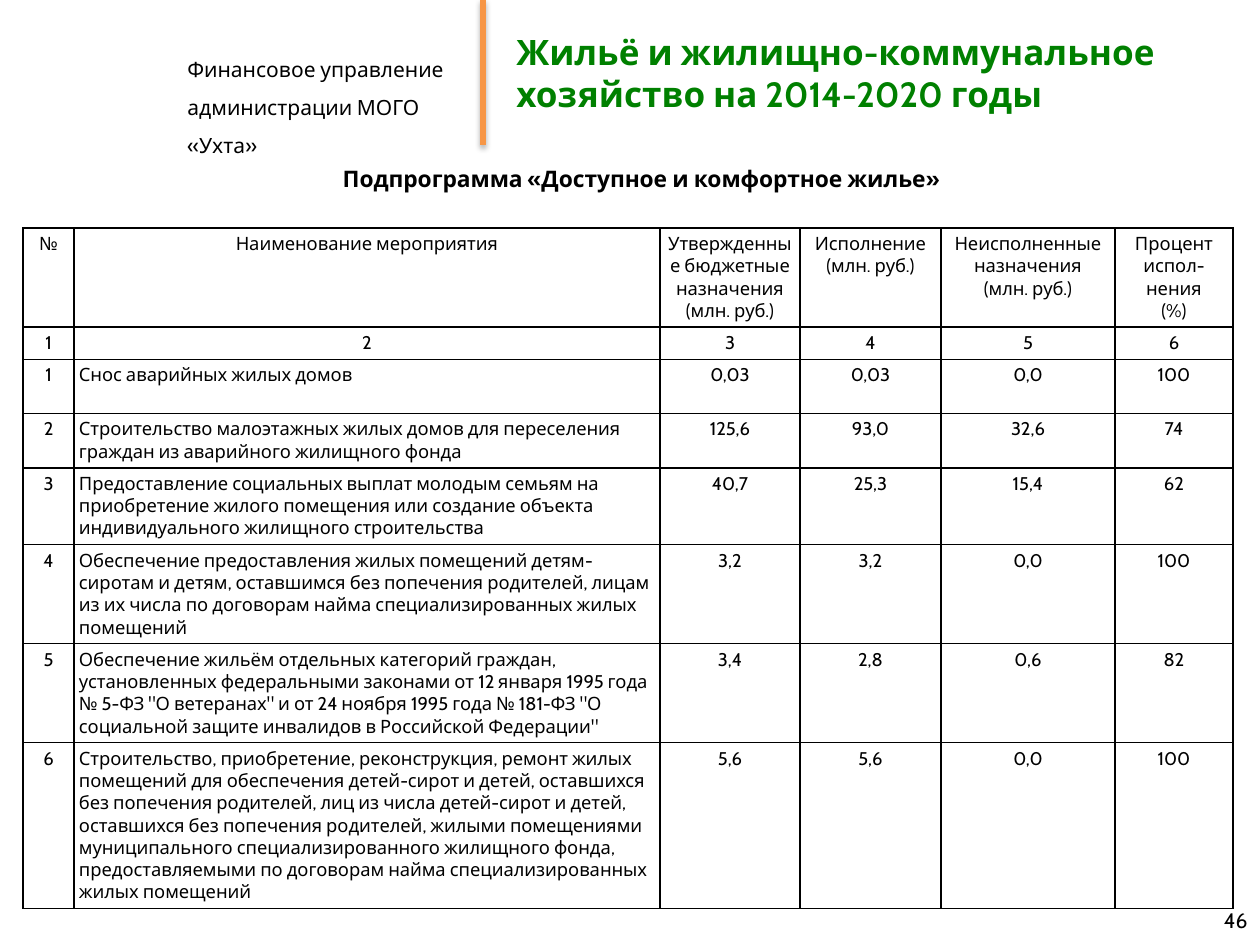
from dataclasses import dataclass

import pptx
import pptx.dml.color
import pptx.enum.shapes
import pptx.enum.text
import pptx.oxml
import pptx.oxml.ns
import pptx.util

PX = 914400 / 126
FONT = "Cabin"
BLACK, GREEN, ORANGE = "000000", "008000", "F79646"
ALIGN = pptx.enum.text.PP_ALIGN
ANCHOR = pptx.enum.text.MSO_ANCHOR

COLUMN_WIDTHS = [51, 586, 140, 141, 174, 118]
ROW_HEIGHTS = [99, 32, 54, 54, 76, 98, 98, 164]
NAME_COLUMN = 1
HEADINGS = [
    "№",
    "Наименование мероприятия",
    "Утвержденные бюджетные назначения\n(млн. руб.)",
    "Исполнение\n(млн. руб.)",
    "Неисполненные назначения\n(млн. руб.)",
    "Процент испол-нения\n(%)",
]


@dataclass
class Measure:
    name: str
    approved: str
    executed: str
    unused: str
    percent: str


MEASURES = [
    Measure("Снос аварийных жилых домов", "0,03", "0,03", "0,0", "100"),
    Measure("Строительство малоэтажных жилых домов для переселения граждан из "
            "аварийного жилищного фонда", "125,6", "93,0", "32,6", "74"),
    Measure("Предоставление социальных выплат молодым семьям на приобретение жилого "
            "помещения или создание объекта индивидуального жилищного строительства",
            "40,7", "25,3", "15,4", "62"),
    Measure("Обеспечение предоставления жилых помещений детям-сиротам и детям, "
            "оставшимся без попечения родителей, лицам из их числа по договорам найма "
            "специализированных жилых помещений", "3,2", "3,2", "0,0", "100"),
    Measure("Обеспечение жильём отдельных категорий граждан, установленных федеральными "
            "законами от 12 января 1995 года № 5-ФЗ \"О ветеранах\" и от 24 ноября 1995 "
            "года № 181-ФЗ \"О социальной защите инвалидов в Российской Федерации\"",
            "3,4", "2,8", "0,6", "82"),
    Measure("Строительство, приобретение, реконструкция, ремонт жилых помещений для "
            "обеспечения детей-сирот и детей, оставшихся без попечения родителей, лиц из "
            "числа детей-сирот и детей, оставшихся без попечения родителей, жилыми "
            "помещениями муниципального специализированного жилищного фонда, "
            "предоставляемыми по договорам найма специализированных жилых помещений",
            "5,6", "5,6", "0,0", "100"),
]


@dataclass
class Label:
    text: str
    left: int
    top: int
    width: int
    height: int
    size: float
    color: str = BLACK
    bold: bool = False
    align: ALIGN = ALIGN.LEFT
    anchor: ANCHOR = ANCHOR.TOP
    spacing: float = 1.0


LABELS = [
    Label("Финансовое управление\nадминистрации МОГО «Ухта»", 175, 38, 315, 83, 12,
          spacing=1.5),
    Label("Подпрограмма «Доступное и комфортное жилье»", 25, 159, 1232, 40, 13,
          bold=True, align=ALIGN.CENTER),
    Label("Жильё и жилищно-коммунальное хозяйство на 2014-2020 годы", 504, 9, 722, 127,
          20, GREEN, bold=True, anchor=ANCHOR.MIDDLE),
    Label("46", 966, 895, 294, 50, 12, align=ALIGN.RIGHT, anchor=ANCHOR.MIDDLE),
]


def emu(px: int) -> pptx.util.Emu:
    return pptx.util.Emu(round(px * PX))


def rgb(color: str) -> pptx.dml.color.RGBColor:
    return pptx.dml.color.RGBColor.from_string(color)


def style_paragraph(para, size: float, color: str, bold: bool, align: ALIGN) -> None:
    para.alignment = align
    for span in para.runs:
        span.font.name = FONT
        span.font.size = pptx.util.Pt(size)
        span.font.bold = bold
        span.font.color.rgb = rgb(color)


def add_label(page, label: Label) -> None:
    box = page.shapes.add_textbox(emu(label.left), emu(label.top),
                                  emu(label.width), emu(label.height))
    frame = box.text_frame
    frame.word_wrap = True
    frame.vertical_anchor = label.anchor
    frame.text = label.text
    for para in frame.paragraphs:
        para.line_spacing = label.spacing
        style_paragraph(para, label.size, label.color, label.bold, label.align)


def add_divider(page) -> None:
    """Draw the orange vertical rule with its soft shadow."""
    line = page.shapes.add_connector(pptx.enum.shapes.MSO_CONNECTOR.STRAIGHT,
                                     emu(483), 0, emu(483), emu(145))
    line.line.color.rgb = rgb(ORANGE)
    line.line.width = pptx.util.Pt(3)
    line._element.spPr.append(pptx.oxml.parse_xml(
        f'<a:effectLst {pptx.oxml.ns.nsdecls("a")}>'
        '<a:outerShdw blurRad="40000" dist="23000" dir="5400000" rotWithShape="0">'
        f'<a:srgbClr val="{BLACK}"><a:alpha val="35000"/></a:srgbClr>'
        '</a:outerShdw></a:effectLst>'))


def add_borders(cell) -> None:
    properties = cell._tc.get_or_add_tcPr()
    for side in "LRTB":
        properties.append(pptx.oxml.parse_xml(
            f'<a:ln{side} {pptx.oxml.ns.nsdecls("a")} w="12700">'
            f'<a:solidFill><a:srgbClr val="{BLACK}"/></a:solidFill></a:ln{side}>'))


def fill_cell(cell, text: str, align: ALIGN) -> None:
    cell.margin_left = cell.margin_right = emu(5)
    cell.margin_top = cell.margin_bottom = emu(5)
    add_borders(cell)
    cell.fill.background()
    cell.text_frame.text = text
    for para in cell.text_frame.paragraphs:
        style_paragraph(para, 10.5, BLACK, False, align)


def add_measures_table(page) -> None:
    numbers = [str(number) for number in range(1, len(HEADINGS) + 1)]
    rows = [HEADINGS, numbers]
    for number, item in enumerate(MEASURES, 1):
        rows.append([str(number), item.name, item.approved, item.executed,
                     item.unused, item.percent])
    table = page.shapes.add_table(len(rows), len(HEADINGS), emu(23), emu(228),
                                  emu(sum(COLUMN_WIDTHS)), emu(sum(ROW_HEIGHTS))).table
    table.first_row = table.horz_banding = False
    for column, width in zip(table.columns, COLUMN_WIDTHS):
        column.width = emu(width)
    for row, height in zip(table.rows, ROW_HEIGHTS):
        row.height = emu(height)
    for r, texts in enumerate(rows):
        for c, text in enumerate(texts):
            is_name = c == NAME_COLUMN and r > 1
            fill_cell(table.cell(r, c), text, ALIGN.LEFT if is_name else ALIGN.CENTER)


def main() -> None:
    deck = pptx.Presentation()
    deck.slide_width, deck.slide_height = emu(1260), emu(945)
    page = deck.slides.add_slide(deck.slide_layouts[6])
    add_divider(page)
    add_measures_table(page)
    for label in LABELS:
        add_label(page, label)
    deck.save("out.pptx")


if __name__ == "__main__":
    main()
